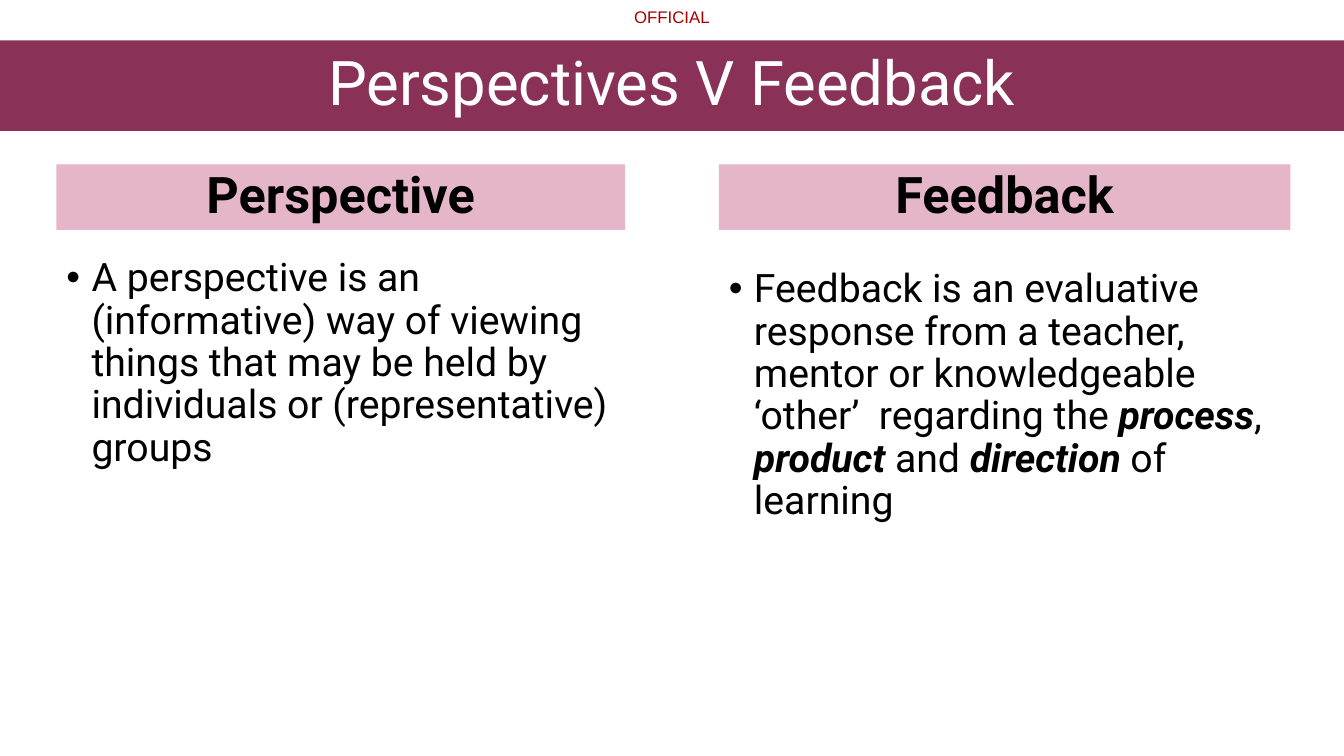
from lxml.etree import SubElement as Sub
from pptx import Presentation
from pptx.dml.color import RGBColor as RGB
from pptx.enum.shapes import MSO_SHAPE as Shape
from pptx.enum.text import MSO_ANCHOR as Anchor, PP_ALIGN as Align
from pptx.oxml.ns import qn

PX = 9144
PLUM = RGB(0x8A, 0x31, 0x58)
PINK = RGB(0xE5, 0xB5, 0xCA)
RED = RGB(0xA8, 0x00, 0x00)
WHITE = RGB(0xFF, 0xFF, 0xFF)
BLACK = RGB(0x00, 0x00, 0x00)

COLUMNS = [
    (56, 564, 251, "Perspective", [
        ("A perspective is an (informative) way of viewing things that may be "
         "held by individuals or (representative) groups", False),
    ]),
    (713, 567, 262, "Feedback", [
        ("Feedback is an evaluative response from a teacher, mentor or "
         "knowledgeable ‘other’  regarding the ", False),
        ("process", True),
        (", ", False),
        ("product", True),
        (" and ", False),
        ("direction", True),
        (" of learning", False),
    ]),
]


def scale(*sizes):
    return [size * PX for size in sizes]


def style(para, size, color, name="Roboto"):
    font = para.font
    font.name = name
    font.size = size * 12700
    font.color.rgb = color


def add_label(slide, box, text):
    frame = slide.shapes.add_textbox(*scale(*box)).text_frame
    frame.margin_left = frame.margin_right = 0
    frame.margin_top = frame.margin_bottom = 0
    para = frame.paragraphs[0]
    para.text = text
    style(para, 12, RED, "Arial")


def add_band(slide, box, text, fill, size, color, anchor, bold=False):
    band = slide.shapes.add_shape(Shape.RECTANGLE, *scale(*box))
    band.shadow.inherit = False
    band.fill.solid()
    band.fill.fore_color.rgb = fill
    band.line.fill.background()
    frame = band.text_frame
    frame.word_wrap = True
    frame.vertical_anchor = anchor
    para = frame.paragraphs[0]
    para.text = text
    para.alignment = Align.CENTER
    para.line_spacing = 0.9
    style(para, size, color)
    para.font.bold = bold


def add_bullet(slide, box, parts):
    frame = slide.shapes.add_textbox(*scale(*box)).text_frame
    frame.word_wrap = True
    para = frame.paragraphs[0]
    para.line_spacing = 0.9
    props = para._p.get_or_add_pPr()
    props.set("marL", str(25 * PX))
    props.set("indent", str(-25 * PX))
    Sub(props, qn("a:buFont")).set("typeface", "Arial")
    Sub(props, qn("a:buChar")).set("char", "•")
    style(para, 28, BLACK)
    for text, strong in parts:
        run = para.add_run()
        run.text = text
        if strong:
            run.font.bold = run.font.italic = True


def main():
    deck = Presentation()
    deck.slide_width, deck.slide_height = scale(1333, 750)
    slide = deck.slides.add_slide(deck.slide_layouts[6])
    add_label(slide, (629, 7, 80, 20), "OFFICIAL")
    add_band(slide, (0, 40, 1333, 90), "Perspectives V Feedback",
             PLUM, 44, WHITE, Anchor.MIDDLE)
    for left, width, top, title, parts in COLUMNS:
        add_band(slide, (left, 163, width, 65), title,
                 PINK, 36, BLACK, Anchor.BOTTOM, bold=True)
        add_bullet(slide, (left, top, width, 403), parts)
    deck.save("out.pptx")


if __name__ == "__main__":
    main()
